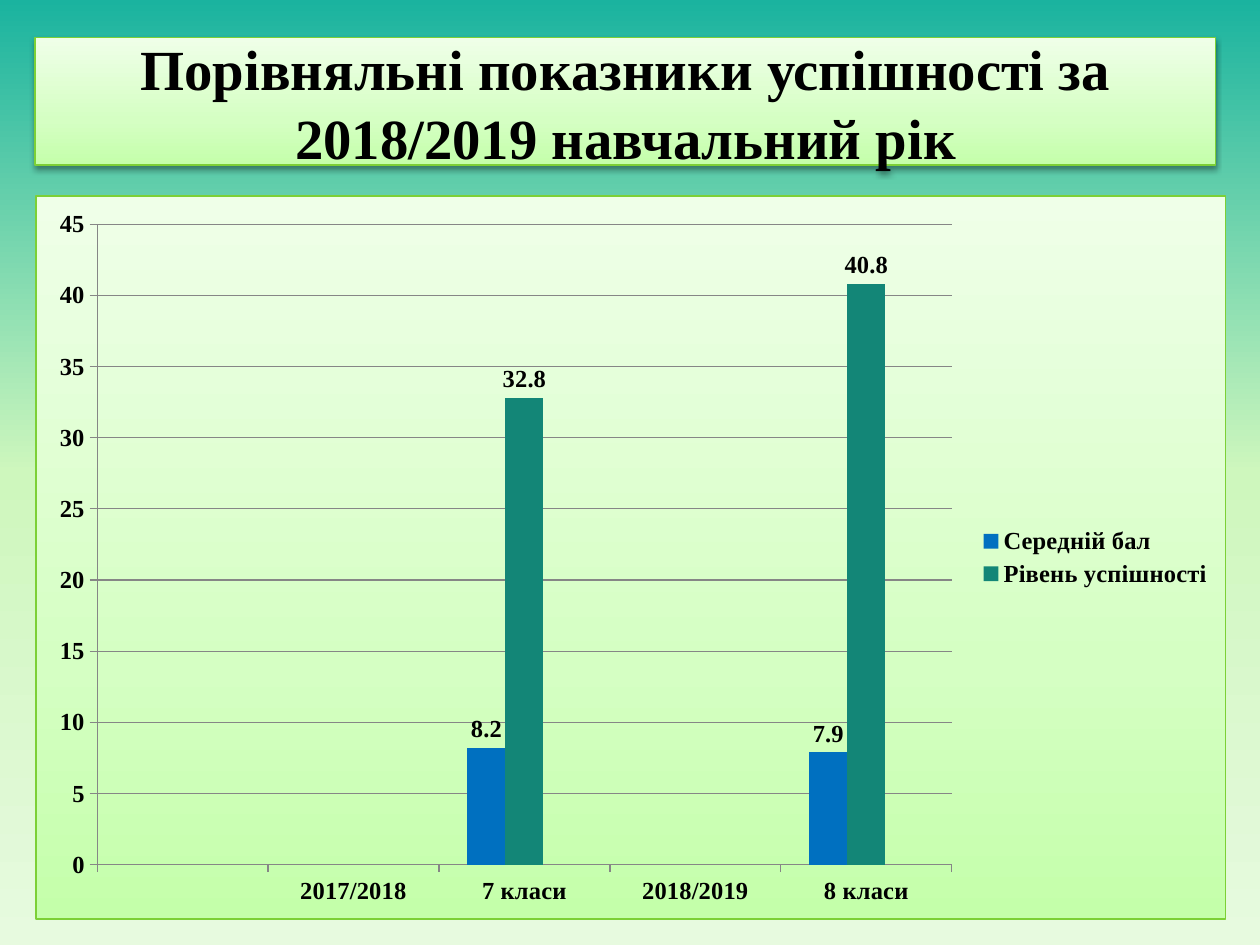
"""Builds a slide comparing school results of 2018/2019 in a column chart."""
from lxml import etree
from pptx import Presentation
from pptx import util as u
from pptx.chart import data
from pptx.dml.color import RGBColor
from pptx.enum import chart as ch
from pptx.enum import shapes, text
from pptx.oxml import parse_xml
from pptx.oxml.ns import nsdecls, qn

Pt = u.Pt
SERIF = "Times New Roman"
BORDER = "7CD036"
GREY = "868686"
LIME = [(0, "C4FFAA"), (35, "D5FFC3"), (100, "EFFFE8")]
SEA = [(0, "1AB39F"), (50, "CEF7BD"), (100, "E7FADF")]


def rgb(value):
    return RGBColor.from_string(value)


def gradient(stops, angle):
    marks = "".join(
        f'<a:gs pos="{pos * 1000}"><a:srgbClr val="{rgb(value)}"/></a:gs>'
        for pos, value in stops)
    return parse_xml(
        f'<a:gradFill {nsdecls("a")} rotWithShape="1"><a:gsLst>{marks}</a:gsLst>'
        f'<a:lin ang="{angle * 60000}" scaled="0"/></a:gradFill>')


deck = Presentation()
deck.slide_width, deck.slide_height = Pt(720), Pt(540)
slide = deck.slides.add_slide(deck.slide_layouts[6])
slide.background.fill.solid()
backdrop = slide.background._cSld.find(".//" + qn("p:bgPr"))
backdrop.replace(backdrop[0], gradient(SEA, 90))

heading = slide.shapes.add_shape(
    shapes.MSO_SHAPE.RECTANGLE, Pt(20), Pt(21.6), Pt(674.8), Pt(72.7))
heading.fill.solid()
heading.line.color.rgb = rgb(BORDER)
heading.line.width = Pt(0.75)
heading.shadow.inherit = False
look = heading._element.spPr
look.replace(look.find(qn("a:solidFill")), gradient(LIME, 270))
look.find(qn("a:effectLst")).append(parse_xml(
    f'<a:outerShdw {nsdecls("a")} blurRad="{Pt(3.1)}" dist="{Pt(1.6)}" dir="5400000" '
    'rotWithShape="0"><a:srgbClr val="000000"><a:alpha val="38000"/></a:srgbClr></a:outerShdw>'))
heading.text_frame.word_wrap = True
heading.text_frame.vertical_anchor = text.MSO_ANCHOR.MIDDLE
wording = heading.text_frame.paragraphs[0]
wording.text = "Порівняльні показники успішності за 2018/2019 навчальний рік"
wording.alignment = text.PP_ALIGN.CENTER
wording.line_spacing = Pt(39.4)
wording.font.color.rgb = rgb("000000")

results = data.CategoryChartData()
results.categories = ["", "2017/2018", "7 класи", "2018/2019", "8 класи"]
results.add_series("Середній бал", [None, None, 8.2, None, 7.9])
results.add_series("Рівень успішності", [None, None, 32.8, None, 40.8])
results.add_series("Ряд 3", [None] * 5)
chart = slide.shapes.add_chart(
    ch.XL_CHART_TYPE.COLUMN_CLUSTERED, Pt(20.2), Pt(111.6), Pt(680.4), Pt(414), results).chart
chart.has_title = False
chart.font.size = Pt(10)
chart.font.name = "Calibri"
chart.font.color.rgb = rgb("000000")

panel = parse_xml(
    f'<c:spPr {nsdecls("c", "a")}><a:ln w="{Pt(0.75)}"><a:solidFill>'
    f'<a:srgbClr val="{BORDER}"/></a:solidFill></a:ln></c:spPr>')
panel.insert(0, gradient(LIME, 270))
chart._chartSpace.find(qn("c:chart")).addnext(panel)

columns = chart.plots[0]
columns.gap_width = 150
columns.overlap = 0
columns.vary_by_categories = False
for series, shade in zip(columns.series, ["0070C0", "138677", "FEB80A"]):
    series.format.fill.solid()
    series.format.fill.fore_color.rgb = rgb(shade)
    series.invert_if_negative = False

chart.has_legend = True
chart.legend.position = ch.XL_LEGEND_POSITION.RIGHT
chart.legend.include_in_layout = False
hidden = etree.Element(qn("c:legendEntry"))
etree.SubElement(hidden, qn("c:idx"), val="2")
etree.SubElement(hidden, qn("c:delete"), val="1")
chart.legend._element.find(qn("c:legendPos")).addnext(hidden)

grid = chart.value_axis.major_gridlines
for ruled in (chart.category_axis, chart.value_axis, grid):
    ruled.format.line.color.rgb = rgb(GREY)
    ruled.format.line.width = Pt(0.75)
for axis in (chart.category_axis, chart.value_axis):
    axis.major_tick_mark = ch.XL_TICK_MARK.OUTSIDE

fonts = [wording.font, chart.legend.font,
         chart.category_axis.tick_labels.font, chart.value_axis.tick_labels.font]
for series in list(columns.series)[:2]:
    labels = series.data_labels
    labels.show_value = True
    labels.position = ch.XL_LABEL_POSITION.OUTSIDE_END
    fonts.append(labels.font)
for font in fonts:
    for key, value in {"name": SERIF, "size": Pt(14), "bold": True}.items():
        setattr(font, key, value)
wording.font.size = Pt(32.4)

deck.save("out.pptx")
